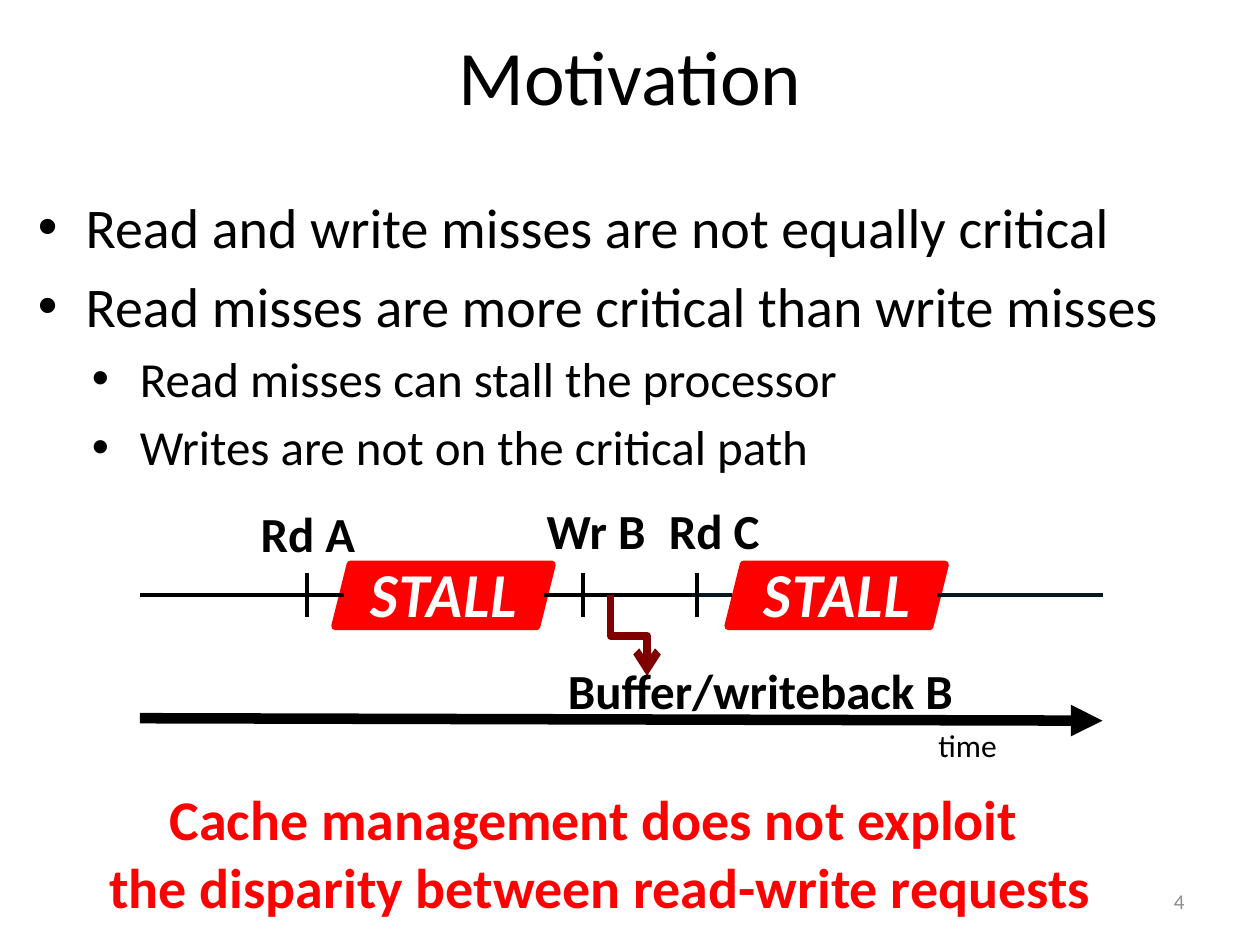
from dataclasses import dataclass

from lxml import etree
from pptx import Presentation
from pptx.dml.color import RGBColor
from pptx.enum.shapes import MSO_CONNECTOR, MSO_SHAPE
from pptx.enum.text import MSO_ANCHOR, MSO_AUTO_SIZE, PP_ALIGN
from pptx.oxml.ns import qn
from pptx.util import Inches, Pt

LINE, ELBOW = MSO_CONNECTOR.STRAIGHT, MSO_CONNECTOR.ELBOW
SLANT = MSO_SHAPE.PARALLELOGRAM
MIDDLE, TOP = MSO_ANCHOR.MIDDLE, MSO_ANCHOR.TOP
LEFT, CENTER, RIGHT = PP_ALIGN.LEFT, PP_ALIGN.CENTER, PP_ALIGN.RIGHT


@dataclass(frozen=True)
class Theme:
    font: str = "Calibri"
    accent: str = "Lato"
    ink: str = "000000"
    navy: str = "061922"
    red: str = "FF0000"
    maroon: str = "800000"
    white: str = "FFFFFF"
    gray: str = "8C8C8C"
    title: int = 44
    large: int = 32
    label: int = 28
    small: int = 18
    tiny: int = 12
    thin: float = 2.25
    thick: float = 4.5
    axis: float = 6


T = Theme()


def place(shape, box):
    shape.left, shape.top, shape.width, shape.height = map(Inches, box)


def style(par, size, color=T.ink, bold=None, italic=None, font=T.font):
    for run in par.runs:
        face = run.font
        face.name, face.size = font, Pt(size)
        face.bold, face.italic = bold, italic
        face.color.rgb = RGBColor.from_string(color)


def indent(par, left, first=0):
    props = par._p.get_or_add_pPr()
    props.set("marL", str(Inches(left)))
    props.set("indent", str(Inches(first)))
    return props


def add_text(slide, box, text, size, color=T.ink, bold=None, align=LEFT, anchor=TOP):
    shape = slide.shapes.add_textbox(*map(Inches, box))
    frame = shape.text_frame
    frame.word_wrap, frame.vertical_anchor = True, anchor
    frame.text = text
    for par in frame.paragraphs:
        par.alignment = align
        style(par, size, color, bold)
    return frame


def add_line(slide, start, end, color=T.ink, width=T.thin, kind=LINE, tail=None):
    line = slide.shapes.add_connector(kind, *map(Inches, (*start, *end)))
    line.line.color.rgb = RGBColor.from_string(color)
    line.line.width = Pt(width)
    if tail:
        etree.SubElement(line.line._get_or_add_ln(), qn("a:tailEnd"), type=tail)
    etree.SubElement(line._element.spPr, qn("a:effectLst"))
    return line


def add_title(slide, box, text):
    shape = slide.shapes.title
    place(shape, box)
    frame = shape.text_frame
    frame.text, frame.vertical_anchor = text, MIDDLE
    par = frame.paragraphs[0]
    par.alignment = CENTER
    style(par, T.title)


def add_list(slide, box, items):
    shape = slide.placeholders[1]
    place(shape, box)
    frame = shape.text_frame
    frame.text = "\n".join(text for _, text in items)
    frame.auto_size = MSO_AUTO_SIZE.NONE
    for par, (level, _) in zip(frame.paragraphs, items):
        par.level = level
        props = indent(par, (0.38, 0.81)[level], -0.38)
        etree.SubElement(props, qn("a:buChar"), char="•")
        style(par, (T.large, T.label)[level])


def add_stall(slide, box):
    shape = slide.shapes.add_shape(SLANT, *map(Inches, box))
    shape.shadow.inherit = False
    red = RGBColor.from_string(T.red)
    shape.fill.solid()
    shape.fill.fore_color.rgb = red
    shape.line.color.rgb = red
    shape.line.width = Pt(T.thick)
    frame = shape.text_frame
    frame.text, frame.word_wrap = "STALL", False
    frame.vertical_anchor = MIDDLE
    par = frame.paragraphs[0]
    par.alignment = CENTER
    style(par, T.large, T.white, True, True, T.accent)


def add_timeline(slide, box):
    x, y, wide, _ = box
    row = y + 0.8

    # Time axis
    add_line(slide, (x, y + 1.78), (x + wide, y + 1.8), width=T.axis, tail="triangle")
    add_text(slide, (x + 6.24, y + 1.79, 0.83, 0.4), "time", T.small)

    # Stalls and the running spans between them
    for left in (1.55, 4.67):
        add_stall(slide, (x + left, y + 0.56, 1.72, 0.49))
    spans = ((0, 1.62, T.ink), (3.21, 4.42, T.ink),
             (4.38, 4.7, T.navy), (6.33, wide, T.navy))
    for start, end, color in spans:
        add_line(slide, (x + start, row), (x + end, row), color)

    # Requests: tick, label left, label top, label width
    requests = (("Rd A", 1.33, 0.86, 0.03, 1.07),
                ("Wr B", 3.52, 3.13, 0, 1.14),
                ("Rd C", 4.42, 4.1, 0, 1.07))
    for text, tick, left, top, width in requests:
        add_line(slide, (x + tick, row - 0.17), (x + tick, row + 0.18))
        add_text(slide, (x + left, y + top, width, 0.57), text, T.label, bold=True)

    # Write leaves the critical path: elbow turned to run down, across, down
    left, top = x + 3.56, y + 0.98
    elbow = add_line(slide, (left, top), (left + 0.64, top + 0.29),
                     T.maroon, T.thick, ELBOW, "arrow")
    frame = elbow._element.spPr.find(qn("a:xfrm"))
    frame.set("rot", str(270 * 60000))
    frame.set("flipH", "1")
    add_text(slide, (x + 3.3, y + 1.27, 3.77, 0.57), "Buffer/writeback B",
             T.label, bold=True)


def add_claim(slide, box, text):
    frame = add_text(slide, box, text, T.large, T.red, True, CENTER)
    for par in frame.paragraphs:
        indent(par, 0.5)


def main():
    deck = Presentation()
    deck.slide_width, deck.slide_height = Inches(10), Inches(7.5)
    slide = deck.slides.add_slide(deck.slide_layouts[1])
    add_title(slide, (0.5, -0.03, 9, 1.25), "Motivation")
    add_list(slide, (0.2, 1.48, 9.64, 2.33), (
        (0, "Read and write misses are not equally critical"),
        (0, "Read misses are more critical than write misses"),
        (1, "Read misses can stall the processor"),
        (1, "Writes are not on the critical path"),
    ))
    add_timeline(slide, (1.11, 3.92, 7.64, 2.19))
    add_claim(slide, (0.07, 6.18, 8.89, 1.18),
              "Cache management does not exploit \n"
              "the disparity between read-write requests")
    # Page number
    add_text(slide, (7.17, 6.95, 2.33, 0.4), "4", T.tiny, T.gray,
             align=RIGHT, anchor=MIDDLE)
    deck.save("out.pptx")


if __name__ == "__main__":
    main()
